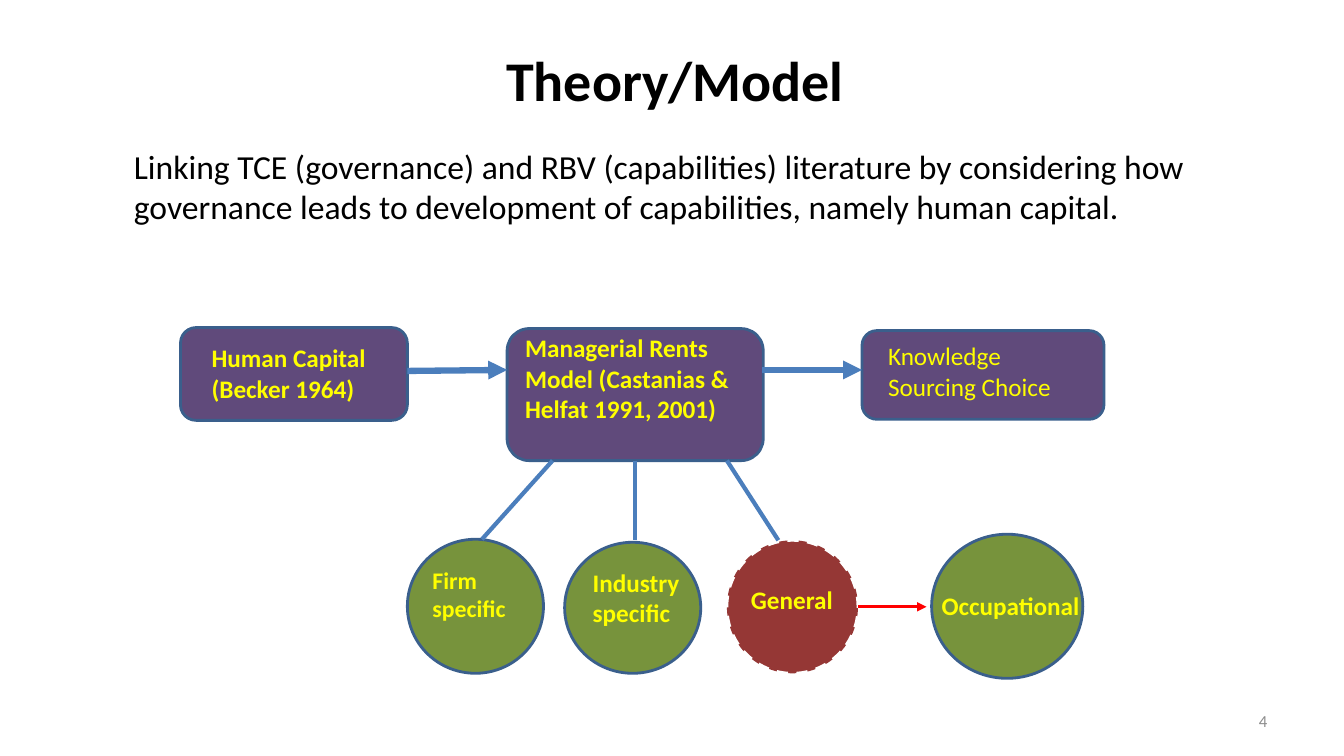
import pptx
import pptx.util
import lxml.etree
from pptx.dml.color import RGBColor
from pptx.enum.dml import MSO_LINE
from pptx.enum.shapes import MSO_CONNECTOR, MSO_SHAPE
from pptx.enum.text import MSO_ANCHOR, MSO_AUTO_SIZE, PP_ALIGN
from pptx.oxml.ns import qn

PX = 9144  # EMU per px, 100 px to the inch
THEME = {
    "font": "Calibri",
    "ink": "000000", "muted": "8C8C8C", "label": "FFFF00", "paper": "FFFFFF",
    "box": "604A7B", "capital": "77933C", "general": "953735",
    "edge": "3A5F8C", "link": "4B7EBC", "accent": "FF0000",
    "title_pt": 40, "body_pt": 24, "label_pt": 18, "firm_pt": 17, "number_pt": 12,
}


def color(name):
    return RGBColor.from_string(THEME[name])


def write(box, text, size, ink, bold=False, align=PP_ALIGN.LEFT,
          anchor=MSO_ANCHOR.TOP, auto_size=MSO_AUTO_SIZE.NONE):
    """Fill a text shape with one formatted paragraph and return the paragraph."""
    frame = box.text_frame
    frame.text = text
    frame_format = {"word_wrap": True, "vertical_anchor": anchor, "auto_size": auto_size}
    for key, value in frame_format.items():
        setattr(frame, key, value)
    para = frame.paragraphs[0]
    para.alignment = align
    span = para.runs[0]
    font_format = {"name": THEME["font"], "size": pptx.util.Pt(THEME[size]), "bold": bold}
    for key, value in font_format.items():
        setattr(span.font, key, value)
    span.font.color.rgb = color(ink)
    return para


deck = pptx.Presentation()
deck.slide_width, deck.slide_height = 1333 * PX, 750 * PX
page = deck.slides.add_slide(deck.slide_layouts[5])

# Title, introduction and page number
title = page.shapes.title
title_place = {"left": 6, "top": 24, "width": 1327, "height": 108}
for side, length in title_place.items():
    setattr(title, side, length * PX)
write(title, "Theory/Model", "title_pt", "ink", True, PP_ALIGN.CENTER, MSO_ANCHOR.MIDDLE)

intro = page.shapes.add_textbox(123 * PX, 140 * PX, 1083 * PX, 484 * PX)
intro_para = write(
    intro,
    "Linking TCE (governance) and RBV (capabilities) literature by considering how "
    "governance leads to development of capabilities, namely human capital.",
    "body_pt", "ink")
intro_para.space_before = pptx.util.Pt(5)

number = page.shapes.add_textbox(956 * PX, 695 * PX, 311 * PX, 40 * PX)
write(number, "4", "number_pt", "muted", False, PP_ALIGN.RIGHT, MSO_ANCHOR.MIDDLE)

# Model nodes: name, preset, place, fill, edge, dash
nodes = {}
for name, preset, place, fill, edge, dash in [
    ("human", MSO_SHAPE.ROUNDED_RECTANGLE, (179, 325, 225, 92), "box", "edge", None),
    ("rents", MSO_SHAPE.ROUNDED_RECTANGLE, (503, 326, 254, 131), "box", "edge", None),
    ("choice", MSO_SHAPE.ROUNDED_RECTANGLE, (855, 328, 240, 88), "box", "edge", None),
    ("firm", MSO_SHAPE.OVAL, (404, 535, 135, 133), "capital", "edge", None),
    ("industry", MSO_SHAPE.OVAL, (560, 538, 135, 130), "capital", "edge", None),
    ("general", MSO_SHAPE.OVAL, (721, 536, 130, 132), "general", "paper", MSO_LINE.DASH),
    ("occupational", MSO_SHAPE.OVAL, (924, 530, 150, 143), "capital", "edge", None),
]:
    node = page.shapes.add_shape(preset, *(length * PX for length in place))
    node.shadow.inherit = False
    node.fill.solid()
    node.fill.fore_color.rgb = color(fill)
    node.line.color.rgb = color(edge)
    node.line.width = pptx.util.Pt(2)
    node.line.dash_style = dash
    nodes[name] = node

# Links: name, start and end, colour, width in points, arrowhead
links = {}
for name, ends, ink, width, arrow in [
    ("human to rents", (404, 368, 503, 367), "link", 4.5, True),
    ("rents to choice", (756, 367, 855, 367), "link", 4.5, True),
    ("rents to firm", (548, 457, 478, 535), "link", 3, False),
    ("rents to industry", (630, 457, 630, 536), "link", 3, False),
    ("rents to general", (721, 457, 772, 536), "link", 3, False),
    ("general to occupational", (851, 602, 919, 602), "accent", 2.25, True),
]:
    link = page.shapes.add_connector(MSO_CONNECTOR.STRAIGHT, *(length * PX for length in ends))
    link.line.color.rgb = color(ink)
    link.line.width = pptx.util.Pt(width)
    if arrow:
        outline = link.line._get_or_add_ln()
        lxml.etree.SubElement(outline, qn("a:tailEnd"), type="triangle")
    lxml.etree.SubElement(link._element.spPr, qn("a:effectLst"))
    links[name] = link
links["rents to industry"].begin_connect(nodes["rents"], 2)

# Labels lie over the nodes: text, place, size, bold
for text, place, size, bold in [
    ("Human Capital (Becker 1964)", (200, 335, 231, 71), "label_pt", True),
    ("Managerial Rents Model (Castanias & Helfat 1991, 2001)",
     (511, 325, 237, 101), "label_pt", True),
    ("Knowledge Sourcing Choice", (871, 333, 202, 71), "label_pt", False),
    ("Firm specific", (419, 556, 94, 67), "firm_pt", True),
    ("Industry specific", (578, 558, 106, 71), "label_pt", True),
    ("General", (735, 575, 104, 40), "label_pt", True),
    ("Occupational", (924, 581, 159, 40), "label_pt", True),
]:
    label = page.shapes.add_textbox(*(length * PX for length in place))
    write(label, text, size, "label", bold, auto_size=MSO_AUTO_SIZE.SHAPE_TO_FIT_TEXT)

deck.save("out.pptx")
